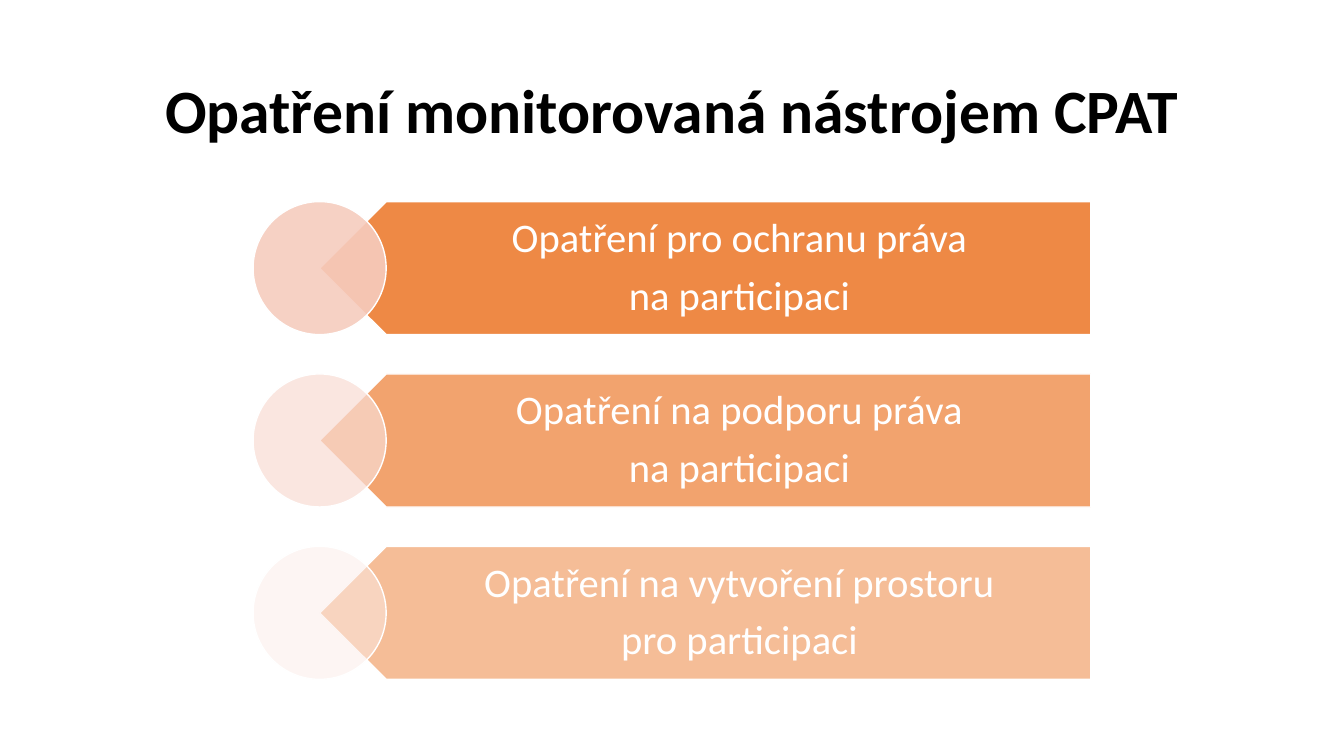
import dataclasses
import typing

import lxml.etree
import pptx
import pptx.dml.color
import pptx.enum.shapes
import pptx.enum.text
import pptx.oxml.ns
import pptx.util

SCALE = 9144
SHAPE = pptx.enum.shapes.MSO_SHAPE
Box = tuple[int, int, int, int]


@dataclasses.dataclass(frozen=True)
class Theme:
    font: str = "Calibri"
    black: str = "000000"
    white: str = "FFFFFF"
    orange: str = "ED7D31"
    title: int = 44
    body: int = 29
    after: int = 10
    edge: int = 1


@dataclasses.dataclass(frozen=True)
class Band:
    lines: tuple[str, ...]
    tint: str
    alpha: int


THEME = Theme()
BANDS = (
    Band(("Opatření pro ochranu práva", "na participaci"), "F6CCBE", 90),
    Band(("Opatření na podporu práva", "na participaci"), "F9DCD4", 70),
    Band(("Opatření na vytvoření prostoru", "pro participaci"), "FCECE8", 50),
)
TOP, PITCH, SIZE = 200, 171, 132
LEFT, RIGHT = 251, 1082


def px(size: int) -> pptx.util.Emu:
    return pptx.util.Emu(size * SCALE)


def rgb(code: str) -> pptx.dml.color.RGBColor:
    return pptx.dml.color.RGBColor.from_string(code)


def add_form(slide: typing.Any, kind: SHAPE, box: Box, color: str,
             alpha: int, turn: int = 0) -> None:
    form = slide.shapes.add_shape(kind, *map(px, box))
    form.shadow.inherit = False
    form.rotation = turn
    form.fill.solid()
    form.fill.fore_color.rgb = rgb(color)
    tone = form.fill._xPr.find(".//" + pptx.oxml.ns.qn("a:srgbClr"))
    lxml.etree.SubElement(
        tone, pptx.oxml.ns.qn("a:alpha"), val=str(alpha * 1000))
    form.line.color.rgb = rgb(THEME.white)
    form.line.width = pptx.util.Pt(THEME.edge)


def add_text(slide: typing.Any, box: Box, lines: tuple[str, ...], size: int,
             color: str, inset: Box, after: int = 0,
             bold: bool = False) -> None:
    frame = slide.shapes.add_textbox(*map(px, box)).text_frame
    frame.word_wrap = True
    frame.vertical_anchor = pptx.enum.text.MSO_ANCHOR.MIDDLE
    (frame.margin_left, frame.margin_top,
     frame.margin_right, frame.margin_bottom) = map(px, inset)
    for rank, line in enumerate(lines):
        para = frame.add_paragraph() if rank else frame.paragraphs[0]
        para.alignment = pptx.enum.text.PP_ALIGN.CENTER
        para.line_spacing = 0.9
        para.space_after = pptx.util.Pt(after)
        run = para.add_run()
        run.text = line
        run.font.name = THEME.font
        run.font.size = pptx.util.Pt(size)
        run.font.bold = bold
        run.font.color.rgb = rgb(color)


def add_band(slide: typing.Any, band: Band, top: int) -> None:
    tip = LEFT + SIZE // 2
    text = tip + SIZE // 4
    add_form(slide, SHAPE.PENTAGON, (tip, top, RIGHT - tip, SIZE),
             THEME.orange, band.alpha, 180)
    add_text(slide, (text, top, RIGHT - text, SIZE), band.lines,
             THEME.body, THEME.white, (58, 12, 23, 12), THEME.after)
    add_form(slide, SHAPE.OVAL, (LEFT, top, SIZE, SIZE),
             band.tint, band.alpha)


def main() -> None:
    deck = pptx.Presentation()
    deck.slide_width, deck.slide_height = px(1333), px(750)
    slide = deck.slides.add_slide(deck.slide_layouts[6])
    add_text(slide, (92, 40, 1150, 145),
             ("Opatření monitorovaná nástrojem CPAT",),
             THEME.title, THEME.black, (10, 5, 10, 5), bold=True)
    for rank, band in enumerate(BANDS):
        add_band(slide, band, TOP + rank * PITCH)
    deck.save("out.pptx")


if __name__ == "__main__":
    main()
